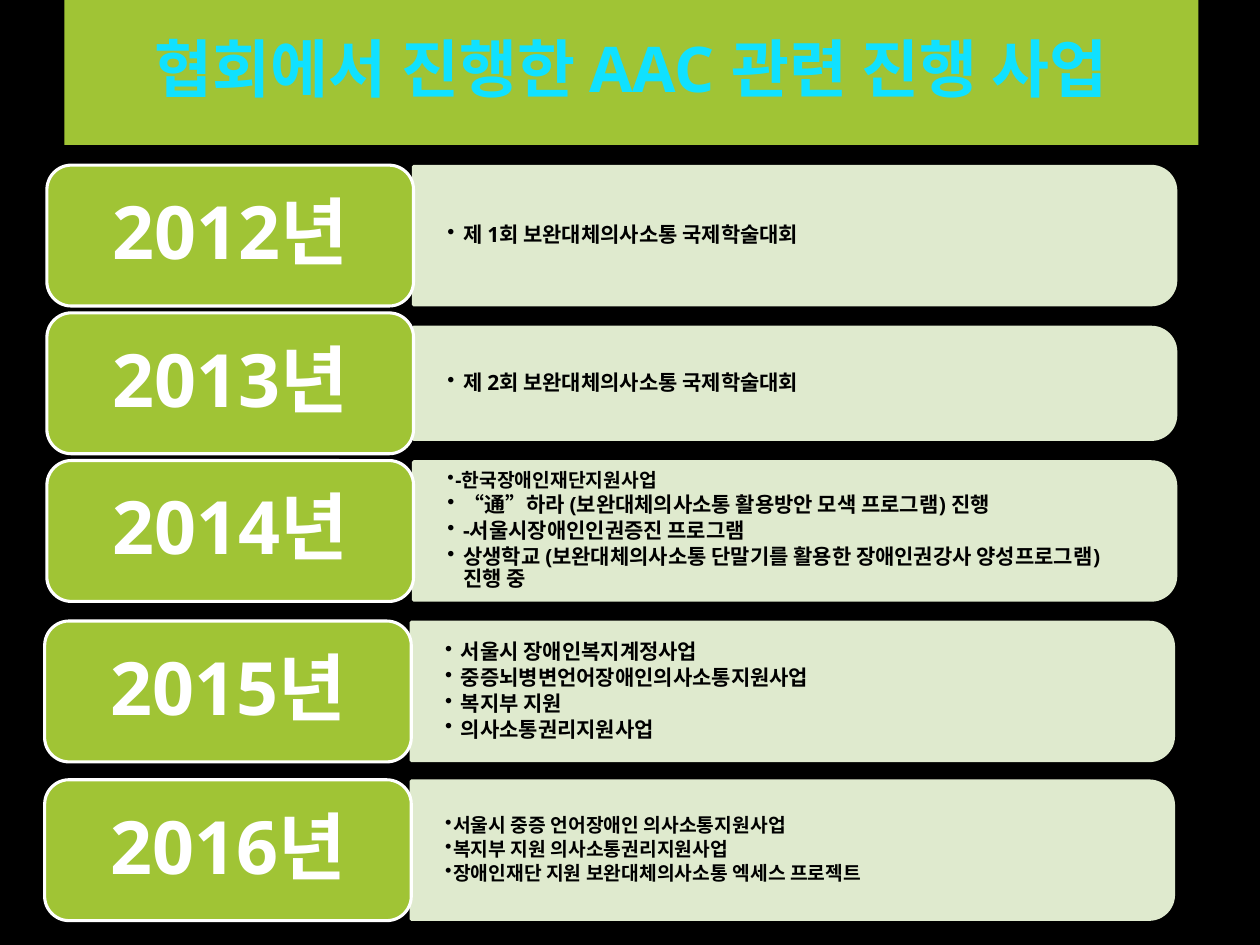
from dataclasses import dataclass
from math import cos, pi, sin

from lxml.etree import SubElement
from pptx import Presentation
from pptx.dml.color import RGBColor
from pptx.enum.shapes import MSO_SHAPE
from pptx.enum.text import MSO_ANCHOR, MSO_AUTO_SIZE, PP_ALIGN
from pptx.oxml.ns import qn
from pptx.shapes.autoshape import Shape
from pptx.slide import Slide
from pptx.text.text import TextFrame, _Paragraph
from pptx.util import Pt

BLACK = RGBColor(0x00, 0x00, 0x00)
WHITE = RGBColor(0xFF, 0xFF, 0xFF)
GREEN = RGBColor(0xA0, 0xC4, 0x35)
PALE_GREEN = RGBColor(0xDF, 0xEA, 0xCE)
CYAN = RGBColor(0x10, 0xE1, 0xFF)
FONT = "Noto Sans"

LABEL_WIDTH, LABEL_HEIGHT = 209.5, 80.5
PANEL_WIDTH = 435.6
CORNER = 14
ARC_STEPS = 12
WIDE_INDENT, NARROW_INDENT = 9, 4.5


@dataclass(frozen=True)
class Item:
    text: str
    size: float = 12
    indent: float = WIDE_INDENT


@dataclass(frozen=True)
class YearRow:
    year: str
    left: float
    top: float
    items: tuple[Item, ...]
    panel_height: float = 79.1


ROWS = (
    YearRow("2012년", 26.8, 94.4, (Item("제 1회 보완대체의사소통 국제학술대회"),)),
    YearRow("2013년", 26.8, 178.8, (Item("제 2회 보완대체의사소통 국제학술대회"),), 64.1),
    YearRow("2014년", 26.8, 263.2, (
        Item("-한국장애인재단지원사업", 11, NARROW_INDENT),
        Item("“通”하라 (보완대체의사소통 활용방안 모색 프로그램) 진행"),
        Item("-서울시장애인인권증진 프로그램"),
        Item("상생학교 (보완대체의사소통 단말기를 활용한 장애인권강사 양성프로그램) 진행 중"),
    )),
    YearRow("2015년", 25.5, 354.9, (
        Item("서울시 장애인복지계정사업"),
        Item("중증뇌병변언어장애인의사소통지원사업"),
        Item("복지부 지원"),
        Item("의사소통권리지원사업"),
    )),
    YearRow("2016년", 25.5, 445.6, (
        Item("서울시 중증 언어장애인 의사소통지원사업", 11, NARROW_INDENT),
        Item("복지부 지원 의사소통권리지원사업", 11, NARROW_INDENT),
        Item("장애인재단 지원 보완대체의사소통 엑세스 프로젝트", 11, NARROW_INDENT),
    )),
)


def style_shape(shape: Shape, fill: RGBColor, line: RGBColor) -> None:
    shape.shadow.inherit = False
    shape.fill.solid()
    shape.fill.fore_color.rgb = fill
    shape.line.color.rgb = line
    shape.line.width = Pt(1.75)


def prepare_frame(frame: TextFrame, left: float, top: float, right: float) -> None:
    frame.word_wrap = True
    frame.auto_size = MSO_AUTO_SIZE.NONE
    frame.vertical_anchor = MSO_ANCHOR.MIDDLE
    frame.margin_left, frame.margin_right = Pt(left), Pt(right)
    frame.margin_top = frame.margin_bottom = Pt(top)


def write(paragraph: _Paragraph, text: str, size: float, color: RGBColor,
          alignment: PP_ALIGN = PP_ALIGN.CENTER) -> None:
    paragraph.alignment = alignment
    paragraph.line_spacing = 0.9
    run = paragraph.add_run()
    run.text = text
    run.font.name = FONT
    run.font.size = Pt(size)
    run.font.bold = True
    run.font.color.rgb = color


def add_bullet(paragraph: _Paragraph, indent: float) -> None:
    properties = paragraph._p.get_or_add_pPr()
    properties.set("marL", str(Pt(indent)))
    properties.set("indent", str(-Pt(indent)))
    SubElement(properties, qn("a:buChar")).set("char", "•")


def add_title(slide: Slide) -> None:
    title = slide.shapes.title
    title.left, title.top, title.width, title.height = Pt(36.8), Pt(0), Pt(648), Pt(82.8)
    title.fill.solid()
    title.fill.fore_color.rgb = GREEN
    prepare_frame(title.text_frame, 20, 20, 20)
    write(title.text_frame.paragraphs[0], "협회에서 진행한 AAC 관련 진행 사업", 36, CYAN)


def add_panel(slide: Slide, row: YearRow) -> None:
    """Draw the list panel, whose two right corners are rounded."""
    left = row.left + LABEL_WIDTH
    top = row.top + (LABEL_HEIGHT - row.panel_height) / 2
    right, bottom = left + PANEL_WIDTH, top + row.panel_height
    angles = [pi / 2 * step / ARC_STEPS for step in range(ARC_STEPS + 1)]
    upper = [(right - CORNER + CORNER * sin(angle), top + CORNER - CORNER * cos(angle))
             for angle in angles]
    lower = [(x, top + bottom - y) for x, y in reversed(upper)]
    points = [(Pt(x), Pt(y)) for x, y in [*upper, *lower, (left, bottom)]]
    builder = slide.shapes.build_freeform(Pt(left), Pt(top))
    builder.add_line_segments(points, close=True)
    panel = builder.convert_to_shape()
    style_shape(panel, PALE_GREEN, PALE_GREEN)

    frame = panel.text_frame
    prepare_frame(frame, 19.4, 14, 23.5)
    for index, item in enumerate(row.items):
        paragraph = frame.add_paragraph() if index else frame.paragraphs[0]
        paragraph.level = 1
        paragraph.space_after = Pt(round(item.size * 0.15, 2))
        write(paragraph, item.text, item.size, BLACK, PP_ALIGN.LEFT)
        add_bullet(paragraph, item.indent)


def add_year_label(slide: Slide, row: YearRow) -> None:
    label = slide.shapes.add_shape(MSO_SHAPE.ROUNDED_RECTANGLE, Pt(row.left), Pt(row.top),
                                   Pt(LABEL_WIDTH), Pt(LABEL_HEIGHT))
    label.adjustments[0] = CORNER / LABEL_HEIGHT
    style_shape(label, GREEN, WHITE)
    prepare_frame(label.text_frame, 13, 7, 13)
    write(label.text_frame.paragraphs[0], row.year, 42, WHITE)


def main() -> None:
    presentation = Presentation()
    presentation.slide_width, presentation.slide_height = Pt(720), Pt(540)
    slide = presentation.slides.add_slide(presentation.slide_layouts[5])
    slide.background.fill.solid()
    slide.background.fill.fore_color.rgb = BLACK
    add_title(slide)
    for row in ROWS:
        add_panel(slide, row)
        add_year_label(slide, row)
    presentation.save("out.pptx")


if __name__ == "__main__":
    main()
